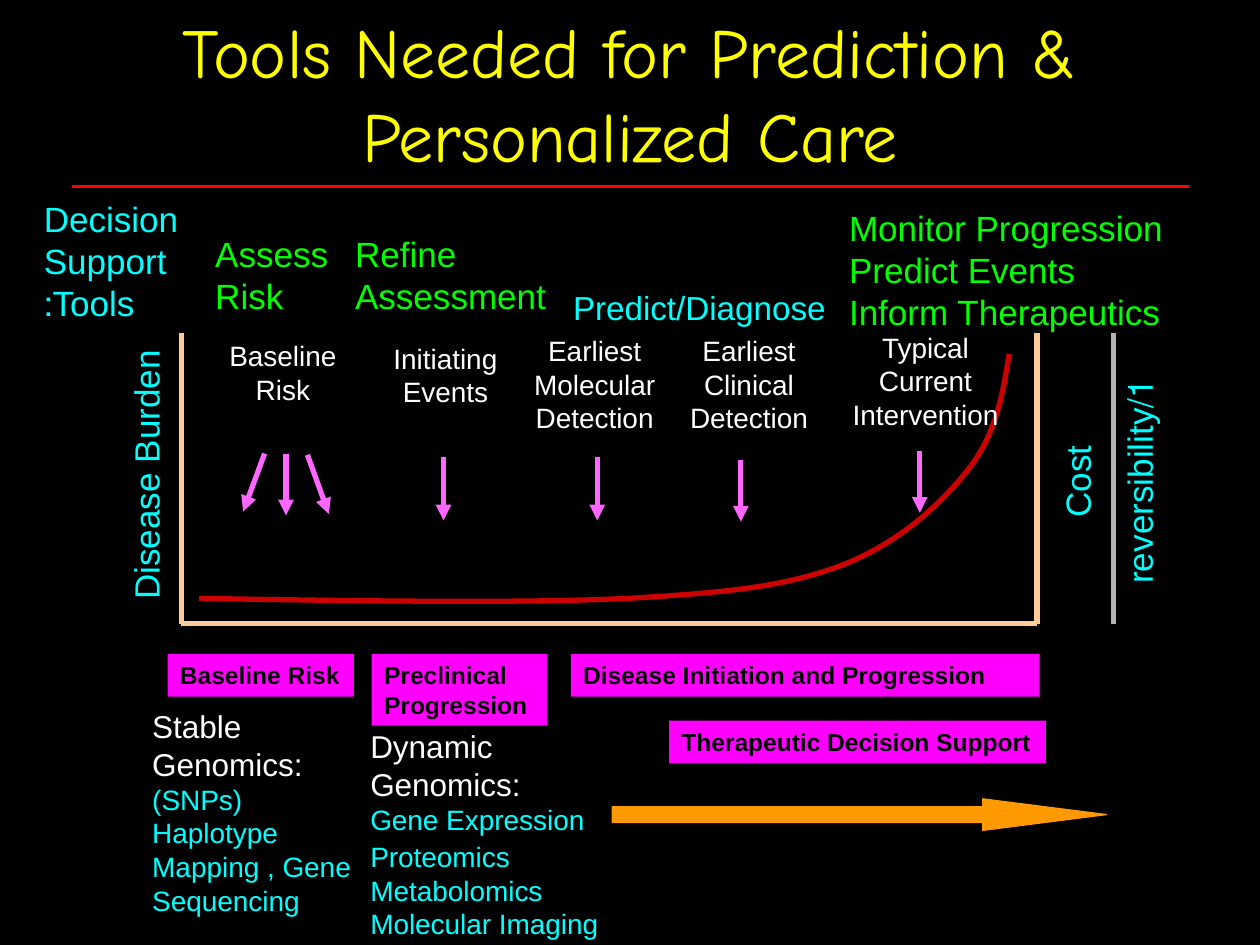
from pptx import Presentation
from pptx.util import Inches, Pt
from pptx.dml.color import RGBColor
from pptx.enum.shapes import MSO_SHAPE, MSO_CONNECTOR
from pptx.enum.text import PP_ALIGN, MSO_ANCHOR
from pptx.oxml.ns import qn
from lxml.etree import SubElement

BLACK = RGBColor(0, 0, 0)
WHITE = RGBColor(255, 255, 255)
YELLOW = RGBColor(255, 255, 0)
CYAN = RGBColor(0, 255, 255)
GREEN = RGBColor(0, 255, 0)
PINK = RGBColor(255, 0, 255)
ORCHID = RGBColor(255, 102, 255)
PEACH = RGBColor(255, 204, 153)
GRAY = RGBColor(178, 178, 178)
CRIMSON = RGBColor(204, 0, 0)
RED = RGBColor(255, 0, 0)
ORANGE = RGBColor(255, 153, 0)
LEFT, CENTER = PP_ALIGN.LEFT, PP_ALIGN.CENTER


def apply(item, style):
    for key, value in style.items():
        setattr(item, key, value)


def style_run(run, size, color, face="Arial", bold=False):
    apply(run.font, {"size": Pt(size), "name": face, "bold": bold})
    run.font.color.rgb = color


def write(shape, words, size, color, align=LEFT, **style):
    frame = shape.text_frame
    apply(frame, {"word_wrap": True, "vertical_anchor": MSO_ANCHOR.TOP})
    frame.text = words
    for para in frame.paragraphs:
        para.alignment = align
        for run in para.runs:
            style_run(run, size, color, **style)
    return frame


def label(slide, box, words, size, color, align=LEFT, **style):
    shape = slide.shapes.add_textbox(*map(Inches, box))
    return shape, write(shape, words, size, color, align, **style)


def flip(para):
    para._p.get_or_add_pPr().set("rtl", "1")


def line(slide, start, end, color, width=3, arrow=False):
    link = slide.shapes.add_connector(
        MSO_CONNECTOR.STRAIGHT, *map(Inches, start + end))
    apply(link.line, {"width": Pt(width)})
    link.line.color.rgb = color
    if arrow:
        SubElement(link.line._get_or_add_ln(), qn("a:tailEnd"), type="triangle")
    SubElement(link._element.spPr, qn("a:effectLst"))


def block(slide, kind, box, color):
    shape = slide.shapes.add_shape(kind, *map(Inches, box))
    shape.shadow.inherit = False
    shape.fill.solid()
    shape.fill.fore_color.rgb = color
    shape.line.fill.background()
    return shape


def draw_head(slide, x, y, w, h):
    title, frame = label(slide, (x, y, w, h), "Tools Needed for Prediction & Personalized Care",
                         40, YELLOW, CENTER, face="Comic Neue")
    frame.vertical_anchor = MSO_ANCHOR.MIDDLE
    rule = y + h + 0.12
    line(slide, (x + 0.57, rule), (x + w - 0.56, rule), RED, 2.25)


def draw_tools(slide, x, y):
    tools, frame = label(slide, (x, y, 1.36, 1.11), "Decision Support Tools:", 20, CYAN)
    flip(frame.paragraphs[0])
    for dx, dy, w, h, words, size, color in (
        (1.36, 0.28, 1.25, 0.77, "Assess Risk", 20, GREEN),
        (2.47, 0.28, 1.73, 0.77, "Refine Assessment", 20, GREEN),
        (4.2, 0.71, 2.36, 0.42, "Predict/Diagnose", 19, CYAN),
        (6.39, 0.07, 3.09, 1.11,
         "Monitor Progression\nPredict Events\nInform Therapeutics", 20, GREEN),
    ):
        label(slide, (x + dx, y + dy, w, h), words, size, color)


def curve(slide, x, y):
    start = (0.14, 2.11)
    bends = (
        ((1.41, 2.13), (2.69, 2.15), (3.54, 2.11)),
        ((4.4, 2.06), (4.81, 2.01), (5.26, 1.84)),
        ((5.71, 1.66), (6.04, 1.35), (6.25, 1.08)),
        ((6.47, 0.8), (6.52, 0.48), (6.57, 0.17)),
    )
    steps, dots, here = 16, [], start
    for bend in bends:
        for step in range(1, steps + 1):
            t = step / steps
            parts = ((1 - t) ** 3, 3 * t * (1 - t) ** 2, 3 * t * t * (1 - t), t ** 3)
            dots.append(tuple(sum(part * dot[axis] for part, dot in zip(parts, (here,) + bend))
                              for axis in (0, 1)))
        here = bend[-1]
    path = [(Inches(x + a), Inches(y + b)) for a, b in [start] + dots]
    pen = slide.shapes.build_freeform(*path[0])
    pen.add_line_segments(path[1:], close=False)
    shape = pen.convert_to_shape()
    shape.shadow.inherit = False
    shape.fill.background()
    shape.line.color.rgb = CRIMSON
    shape.line.width = Pt(3)


def draw_chart(slide, x, y, w, h):
    side, frame = label(slide, (x - 1.42, y + 0.91, 2.28, 0.44),
                        "Disease Burden", 20, CYAN, CENTER)
    cost, frame = label(slide, (x + 6.45, y + 0.69, 1.86, 0.98),
                        "Cost\n1/reversibility", 20, CYAN, CENTER)
    side.rotation = cost.rotation = 270
    first, last = frame.paragraphs
    first.space_after = Pt(18)
    last.line_spacing = 0.7
    flip(last)
    for dx, color in ((0, PEACH), (w, PEACH), (w + 0.61, GRAY)):
        line(slide, (x + dx, y), (x + dx, y + h), color)
    line(slide, (x, y + h), (x + w, y + h), PEACH)
    curve(slide, x, y)


def draw_stages(slide, x, y):
    for dx, dy, w, words, arrows in (
        (0.16, 0, 1.29, "Baseline Risk",
         ((0.66, 0.96, 0.49, 1.42), (0.83, 0.96, 0.83, 1.45), (1, 0.97, 1.17, 1.44))),
        (1.45, 0.02, 1.29, "Initiating Events", ((2.08, 0.99, 2.08, 1.49),)),
        (2.65, -0.04, 1.26, "Earliest Molecular Detection", ((3.3, 0.99, 3.3, 1.49),)),
        (3.92, -0.04, 1.17, "Earliest Clinical Detection", ((4.44, 1.01, 4.44, 1.5),)),
        (5.18, -0.07, 1.45, "Typical Current Intervention", ((5.86, 0.94, 5.86, 1.43),)),
    ):
        label(slide, (x + dx, y + dy, w, 0.91), words, 16, WHITE, CENTER)
        for a, b, c, d in arrows:
            line(slide, (x + a, y + b), (x + c, y + d), ORCHID, arrow=True)


def draw_phases(slide, x, y):
    for dx, dy, w, h, words in (
        (0, 0, 1.48, 0.34, "Baseline Risk"),
        (1.62, 0, 1.39, 0.57, "Preclinical Progression"),
        (3.2, 0, 3.72, 0.34, "Disease Initiation and Progression"),
        (3.98, 0.53, 2.99, 0.34, "Therapeutic Decision Support"),
    ):
        tag = block(slide, MSO_SHAPE.RECTANGLE, (x + dx, y + dy, w, h), PINK)
        write(tag, words, 14, BLACK, bold=True)
    arrow = block(slide, MSO_SHAPE.RIGHT_ARROW, (x + 3.53, y + 1.15, 3.92, 0.25), ORANGE)
    arrow.adjustments[0], arrow.adjustments[1] = 0.5, 3.92
    arrow.line.color.rgb = ORANGE
    arrow.line.width = Pt(0.75)


def draw_notes(slide, x, y):
    for dx, dy, w, h, words in (
        (0, 0, 1.85, 1.78,
         "Stable Genomics:\v(SNPs)\vHaplotype Mapping , Gene Sequencing"),
        (1.73, 0.16, 2.08, 1.75,
         "Dynamic Genomics:\vGene Expression\nProteomics\vMetabolomics\vMolecular Imaging"),
    ):
        note, frame = label(slide, (x + dx, y + dy, w, h), words, 16, CYAN)
        style_run(frame.paragraphs[0].runs[0], 18, WHITE)
        for para in frame.paragraphs[1:]:
            para.space_before = Pt(2)


def main():
    deck = Presentation()
    apply(deck, {"slide_width": Inches(10), "slide_height": Inches(7.5)})
    slide = deck.slides.add_slide(deck.slide_layouts[6])
    slide.background.fill.solid()
    slide.background.fill.fore_color.rgb = BLACK
    draw_head(slide, 0, 0.11, 10, 1.25)
    draw_chart(slide, 1.44, 2.64, 6.79, 2.31)
    draw_stages(slide, 1.44, 2.64)
    draw_tools(slide, 0.25, 1.52)
    draw_phases(slide, 1.33, 5.19)
    draw_notes(slide, 1.11, 5.56)
    deck.save("out.pptx")


if __name__ == "__main__":
    main()
